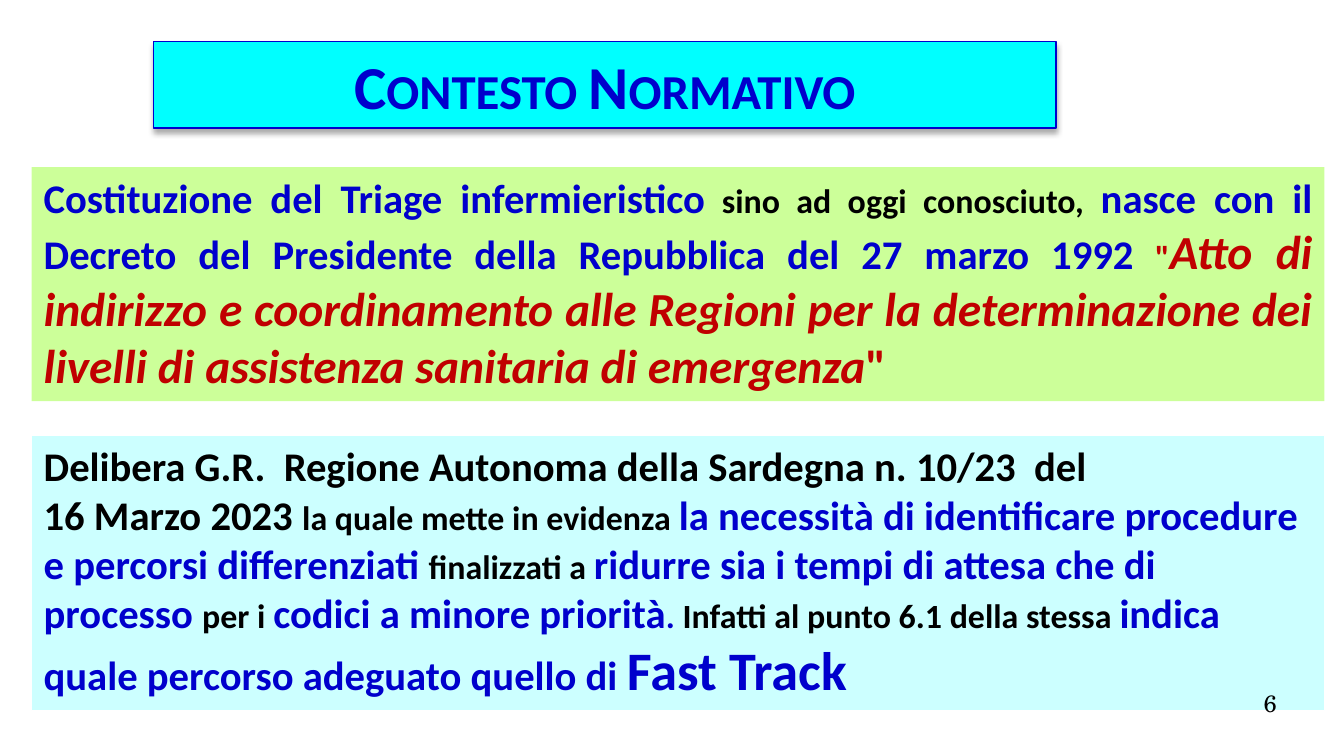
from dataclasses import dataclass
from lxml import etree
from pptx import Presentation
from pptx.dml.color import RGBColor
from pptx.enum.shapes import MSO_SHAPE
from pptx.enum.text import MSO_ANCHOR, MSO_AUTO_SIZE, PP_ALIGN
from pptx.oxml.ns import qn
from pptx.util import Inches, Pt

RECTANGLE = MSO_SHAPE.RECTANGLE
TOP, MIDDLE = MSO_ANCHOR.TOP, MSO_ANCHOR.MIDDLE
NO_AUTOFIT = MSO_AUTO_SIZE.NONE
LEFT, CENTER, RIGHT, JUSTIFY = PP_ALIGN.LEFT, PP_ALIGN.CENTER, PP_ALIGN.RIGHT, PP_ALIGN.JUSTIFY


@dataclass(frozen=True)
class Theme:
    blue: str = "0000CC"
    black: str = "000000"
    red: str = "C00000"
    white: str = "FFFFFF"
    cyan: str = "00FFFF"
    pale_cyan: str = "CCFFFF"
    pale_green: str = "CCFF99"
    body_font: str = "Calibri"
    number_font: str = "TeX Gyre Schola"
    title: int = 36
    highlight: int = 32
    quote: int = 28
    strong: int = 24
    plain: int = 20
    number: int = 14


class SlideBuilder:
    def __init__(self, presentation, theme):
        self.theme = theme
        self.slide = presentation.slides.add_slide(presentation.slide_layouts[5])

    def place(self, shape, box):
        shape.left, shape.top, shape.width, shape.height = map(Inches, box)

    def paint(self, shape, fill, line=None):
        shape.fill.solid()
        shape.fill.fore_color.rgb = RGBColor.from_string(fill)
        if line:
            shape.line.color.rgb = RGBColor.from_string(line)
            shape.line.width = Pt(0.75)
        else:
            shape.line.fill.background()

    def style(self, font, size, color):
        font.size = Pt(size)
        font.color.rgb = RGBColor.from_string(color)

    def drop_shadow(self, shape):
        effects = etree.SubElement(shape._element.spPr, qn("a:effectLst"))
        shadow = etree.SubElement(effects, qn("a:outerShdw"), blurRad=str(Pt(3.5)),
                                  dist=str(Pt(2.2)), dir="5400000", rotWithShape="0")
        color = etree.SubElement(shadow, qn("a:srgbClr"), val=self.theme.black)
        etree.SubElement(color, qn("a:alpha"), val="32000")

    def title(self, text, box):
        title = self.slide.shapes.title
        self.place(title, box)
        self.paint(title, self.theme.cyan, self.theme.blue)
        self.drop_shadow(title)
        frame = title.text_frame
        frame.text = text
        frame.auto_size = NO_AUTOFIT
        frame.vertical_anchor = MIDDLE
        heading = frame.paragraphs[0]
        heading.alignment = CENTER
        heading.font.name = self.theme.body_font
        heading.font.bold = True
        self.style(heading.font, self.theme.title, self.theme.blue)
        heading.runs[0]._r.get_or_add_rPr().set("cap", "small")

    def panel(self, box, fill, paragraphs, alignment=LEFT, line=None):
        panel = self.slide.shapes.add_shape(RECTANGLE, *map(Inches, box))
        panel.shadow.inherit = False
        self.paint(panel, fill, line)
        frame = panel.text_frame
        frame.word_wrap = True
        frame.vertical_anchor = TOP
        for index, passages in enumerate(paragraphs):
            paragraph = frame.add_paragraph() if index else frame.paragraphs[0]
            paragraph.alignment = alignment
            paragraph.font.name = self.theme.body_font
            paragraph.font.bold = True
            for text, size, color, *italic in passages:
                run = paragraph.add_run()
                run.text = text
                self.style(run.font, size, color)
                if italic:
                    run.font.italic = True

    def page_number(self, text, box):
        frame = self.slide.shapes.add_textbox(*map(Inches, box)).text_frame
        frame.word_wrap = True
        frame.margin_left = frame.margin_top = frame.margin_right = frame.margin_bottom = 0
        number = frame.paragraphs[0]
        number.text = text
        number.alignment = RIGHT
        number.font.name = self.theme.number_font
        self.style(number.font, self.theme.number, self.theme.black)


def main():
    presentation = Presentation()
    presentation.slide_width = Inches(11.02)
    presentation.slide_height = Inches(6.2)
    theme = Theme()
    builder = SlideBuilder(presentation, theme)

    key = (theme.strong, theme.blue)
    lead = (theme.strong, theme.black)
    plain = (theme.plain, theme.black)
    quote = (theme.quote, theme.red)

    resolution = [
        [("Delibera G.R.  Regione Autonoma della Sardegna n. 10/23  del", *lead)],
        [
            ("16 Marzo 2023 ", *lead),
            ("la quale mette in evidenza ", *plain),
            ("la necessità di identificare procedure e percorsi differenziati ", *key),
            ("finalizzati a ", *plain),
            ("ridurre sia i tempi di attesa che di processo ", *key),
            ("per i ", *plain),
            ("codici a minore priorità", *key),
            (". ", theme.plain, theme.blue),
            ("Infatti al punto 6.1 della stessa ", *plain),
            ("indica quale percorso adeguato quello di ", *key),
            ("Fast Track", theme.highlight, theme.blue),
        ],
    ]
    decree = [[
        ("Costituzione del Triage infermieristico", *key),
        (" sino ad oggi conosciuto, ", *plain),
        ("nasce con il Decreto del Presidente della Repubblica del 27 marzo 1992", *key),
        (" ", *plain),
        ('"', theme.plain, theme.red),
        ("Atto di indirizzo e coordinamento alle Regioni per la determinazione "
         "dei livelli di assistenza sanitaria di emergenza", *quote, True),
        ('"', *quote),
    ]]

    builder.title("Contesto Normativo", (1.26, 0.34, 7.4, 0.71))
    builder.panel((0.26, 3.57, 10.6, 2.26), theme.pale_cyan, resolution, line=theme.white)
    builder.panel((0.26, 1.37, 10.6, 1.92), theme.pale_green, decree, JUSTIFY)
    builder.page_number("6", (7.9, 5.65, 2.57, 0.43))
    presentation.save("out.pptx")


if __name__ == "__main__":
    main()
